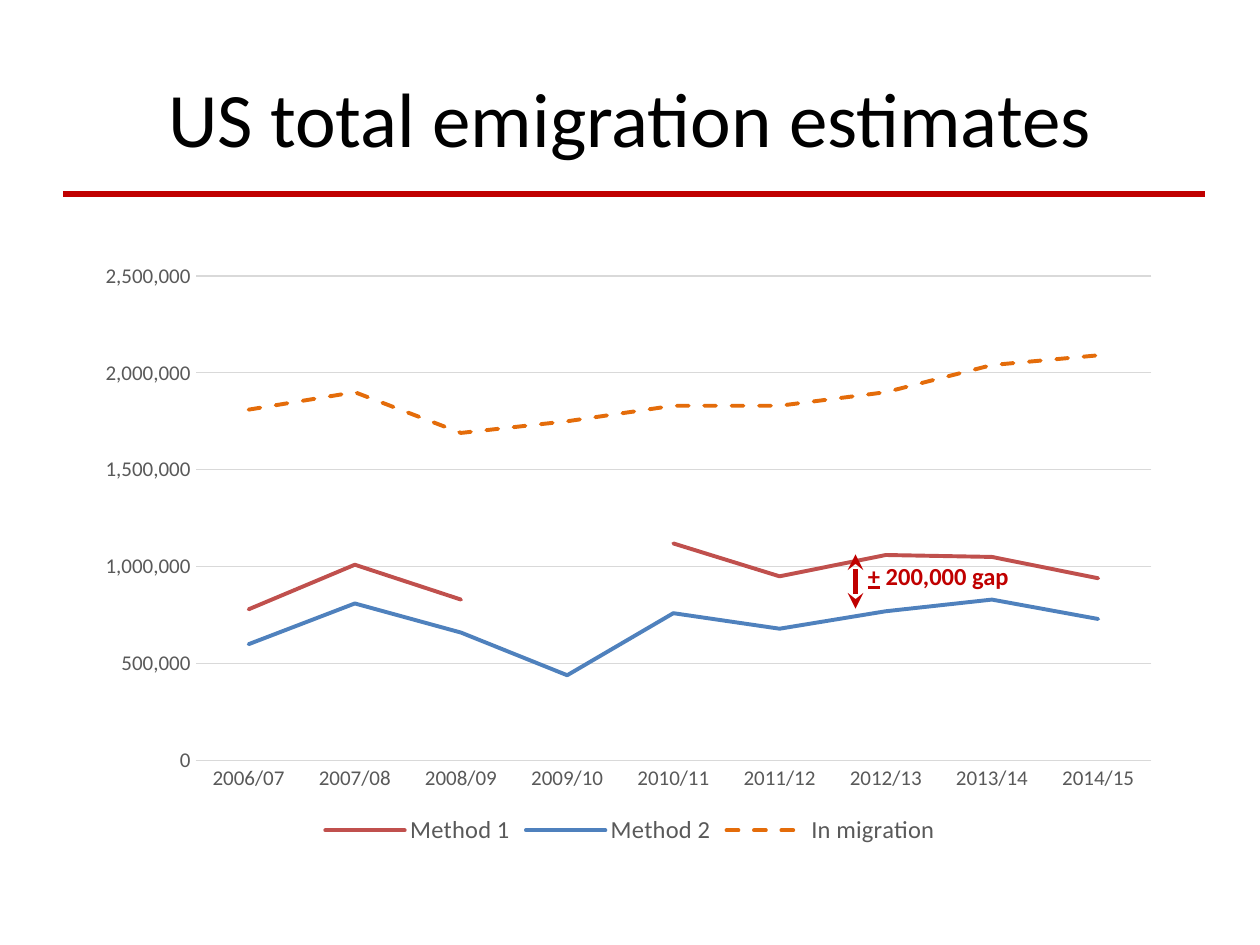
from dataclasses import dataclass
from typing import Optional

from lxml.etree import SubElement
from pptx import Presentation
from pptx.chart.data import CategoryChartData
from pptx.dml.color import RGBColor
from pptx.enum.chart import XL_CHART_TYPE as ChartType
from pptx.enum.chart import XL_LEGEND_POSITION as LegendPosition
from pptx.enum.chart import XL_TICK_MARK as TickMark
from pptx.enum.dml import MSO_LINE as LineStyle
from pptx.enum.shapes import MSO_CONNECTOR as Connector
from pptx.enum.text import MSO_ANCHOR as Anchor
from pptx.enum.text import PP_ALIGN as Align
from pptx.oxml.ns import qn
from pptx.util import Emu, Inches, Pt

BLACK = RGBColor(0x00, 0x00, 0x00)
DARK_RED = RGBColor(0xC0, 0x00, 0x00)
BRICK = RGBColor(0xC0, 0x50, 0x4D)
BLUE = RGBColor(0x4F, 0x81, 0xBD)
ORANGE = RGBColor(0xE4, 0x6C, 0x0A)
GRAY = RGBColor(0x59, 0x59, 0x59)
PALE_GRAY = RGBColor(0xD9, 0xD9, 0xD9)
FONT = "Calibri"
WIDTH, HEIGHT = Inches(10), Inches(7.5)
COLUMNS, ROWS = 100, 75


@dataclass(frozen=True)
class Box:
    column: float
    row: float
    columns: float
    rows: float

    def lengths(self) -> tuple[Emu, Emu, Emu, Emu]:
        return (across(self.column), down(self.row),
                across(self.columns), down(self.rows))


@dataclass(frozen=True)
class Flow:
    name: str
    thousands: tuple[Optional[int], ...]
    color: RGBColor
    dash: Optional[LineStyle] = None


YEARS = [f"{year}/{(year + 1) % 100:02d}" for year in range(2006, 2015)]
FLOWS = (
    Flow("Method 1", (780, 1010, 830, None, 1120, 950, 1060, 1050, 940), BRICK),
    Flow("Method 2", (600, 810, 660, 440, 760, 680, 770, 830, 730), BLUE),
    Flow("In migration", (1810, 1900, 1690, 1750, 1830, 1830, 1900, 2040, 2090),
         ORANGE, LineStyle.DASH),
)
PLOT_SHARES = {"x": 0.1, "y": 0.04, "w": 0.88, "h": 0.81}


def across(columns: float) -> Emu:
    return Emu(round(WIDTH * columns / COLUMNS))


def down(rows: float) -> Emu:
    return Emu(round(HEIGHT * rows / ROWS))


def style_font(font, size: float, color: RGBColor, bold: bool = False) -> None:
    font.name = FONT
    font.size = Pt(size)
    font.bold = bold
    font.color.rgb = color


def style_line(line, color: RGBColor, width: float) -> None:
    line.color.rgb = color
    line.width = Pt(width)


def add_rule(slide, box: Box, arrowheads: tuple[str, ...] = ()) -> None:
    left, top, width, height = box.lengths()
    rule = slide.shapes.add_connector(
        Connector.STRAIGHT, left, top, left + width, top + height)
    style_line(rule.line, DARK_RED, 3)
    properties = rule._element.spPr
    for end in arrowheads:
        SubElement(properties.find(qn("a:ln")), qn(f"a:{end}"), type="stealth")
    SubElement(properties, qn("a:effectLst"))


def add_text(slide, box: Box, parts: tuple[str, ...], size: float,
             color: RGBColor, bold: bool = False,
             align: Align = Align.LEFT, anchor: Anchor = Anchor.TOP):
    frame = slide.shapes.add_textbox(*box.lengths()).text_frame
    frame.word_wrap = True
    frame.vertical_anchor = anchor
    paragraph = frame.paragraphs[0]
    paragraph.alignment = align
    for part in parts:
        paragraph.add_run().text = part
    style_font(paragraph.font, size, color, bold)
    return paragraph


def place_plot(chart) -> None:
    plot_area = chart._chartSpace.chart.plotArea
    layout = plot_area.find(qn("c:layout"))
    if layout is None:
        layout = SubElement(plot_area, qn("c:layout"))
        plot_area.insert(0, layout)
    manual = SubElement(layout, qn("c:manualLayout"))
    settings = {"layoutTarget": "inner", "xMode": "edge", "yMode": "edge"}
    for tag, value in (settings | PLOT_SHARES).items():
        SubElement(manual, qn(f"c:{tag}"), val=str(value))


def add_migration_chart(slide, box: Box) -> None:
    data = CategoryChartData(number_format="#,##0")
    data.categories = YEARS
    for flow in FLOWS:
        data.add_series(flow.name, [None if value is None else value * 1000
                                    for value in flow.thousands])
    chart = slide.shapes.add_chart(ChartType.LINE, *box.lengths(), data).chart
    style_font(chart.font, 10, BLACK)
    chart.has_title = False
    chart.has_legend = True
    chart.legend.position = LegendPosition.BOTTOM
    chart.legend.include_in_layout = False
    style_font(chart.legend.font, 14, GRAY)

    years, people = chart.category_axis, chart.value_axis
    for axis in (years, people):
        axis.major_tick_mark = axis.minor_tick_mark = TickMark.NONE
        style_font(axis.tick_labels.font, 12, GRAY)
    style_line(years.format.line, PALE_GRAY, 0.75)
    people.format.line.fill.background()
    people.has_major_gridlines = True
    style_line(people.major_gridlines.format.line, PALE_GRAY, 0.75)
    people.minimum_scale, people.maximum_scale = 0, 2_500_000
    people.major_unit = 500_000
    people.tick_labels.number_format = "#,##0"
    people.tick_labels.number_format_is_linked = False

    plot = chart.plots[0]
    plot.vary_by_categories = False
    for series, flow in zip(plot.series, FLOWS):
        series.smooth = False
        line = series.format.line
        style_line(line, flow.color, 2.25)
        if flow.dash is not None:
            line.dash_style = flow.dash
        series._element.spPr.find(qn("a:ln")).set("cap", "rnd")
    place_plot(chart)


def main() -> None:
    deck = Presentation()
    deck.slide_width, deck.slide_height = WIDTH, HEIGHT
    slide = deck.slides.add_slide(deck.slide_layouts[6])
    add_rule(slide, Box(5, 15.4, 90.6, 0))
    add_text(slide, Box(5, 3, 90, 12.5), ("US total emigration estimates",),
             44, BLACK, align=Align.CENTER, anchor=Anchor.MIDDLE)
    add_migration_chart(slide, Box(6.9, 20, 86.2, 47.5))
    add_rule(slide, Box(67.9, 44, 0, 4.3), ("headEnd", "tailEnd"))
    gap = add_text(slide, Box(67.9, 44, 14, 3.4), ("+", " 200,000 gap"),
                   14, DARK_RED, bold=True)
    gap.runs[0].font.underline = True
    deck.save("out.pptx")


if __name__ == "__main__":
    main()
